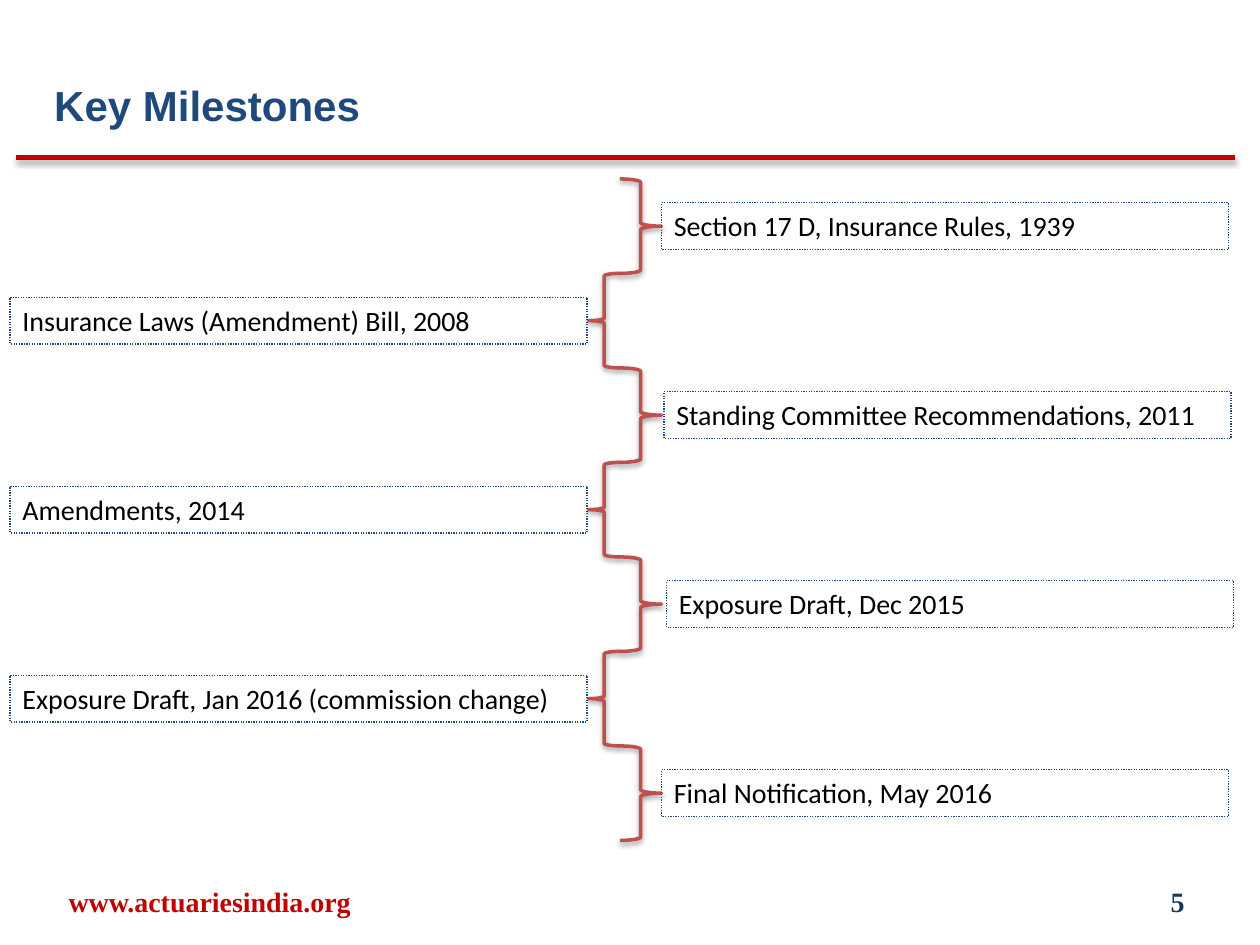
from dataclasses import dataclass

from lxml import etree
from pptx import Presentation
from pptx.dml.color import RGBColor
from pptx.enum.dml import MSO_LINE
from pptx.enum.shapes import MSO_CONNECTOR, MSO_SHAPE
from pptx.enum.text import MSO_ANCHOR, MSO_AUTO_SIZE, PP_ALIGN
from pptx.oxml.ns import qn
from pptx.util import Inches, Pt

LEFT, MID, RIGHT = PP_ALIGN.LEFT, PP_ALIGN.CENTER, PP_ALIGN.RIGHT
TOP, CENTER = MSO_ANCHOR.TOP, MSO_ANCHOR.MIDDLE
FIT, FIXED = MSO_AUTO_SIZE.SHAPE_TO_FIT_TEXT, MSO_AUTO_SIZE.NONE
OPEN, CLOSE = MSO_SHAPE.LEFT_BRACE, MSO_SHAPE.RIGHT_BRACE
DOT = MSO_LINE.ROUND_DOT
STRAIGHT = MSO_CONNECTOR.STRAIGHT


@dataclass(frozen=True)
class Theme:
    """Hold the colours, fonts and type sizes."""

    red: RGBColor = RGBColor.from_string("C00000")
    brace: RGBColor = RGBColor.from_string("C0504D")
    blue: RGBColor = RGBColor.from_string("1F497D")
    navy: RGBColor = RGBColor.from_string("17375E")
    black: RGBColor = RGBColor.from_string("000000")
    head: str = "Arial"
    body: str = "Calibri"
    foot: str = "Times New Roman"
    large: Pt = Pt(24)
    small: Pt = Pt(16)


THEME = Theme()
TITLE = {"name": THEME.head, "size": THEME.large, "bold": True}
LABEL = {"name": THEME.body, "size": THEME.small, "bold": False}
FOOT = {"name": THEME.foot, "size": THEME.small, "bold": True}

EVENTS = [
    ("Section 17 D, Insurance Rules, 1939", 5.25),
    ("Insurance Laws (Amendment) Bill, 2008", 0.08),
    ("Standing Committee Recommendations, 2011", 5.27),
    ("Amendments, 2014", 0.08),
    ("Exposure Draft, Dec 2015", 5.29),
    ("Exposure Draft, Jan 2016 (commission change)", 0.08),
    ("Final Notification, May 2016", 5.25),
]


def assign(target, values):
    """Set each named attribute of the target."""
    for name, value in values.items():
        setattr(target, name, value)


def place(shape, box):
    """Move a shape to a box given in inches."""
    names = ("left", "top", "width", "height")
    assign(shape, dict(zip(names, map(Inches, box))))


def write(shape, text, style, color, align=LEFT, anchor=TOP, fit=FIXED):
    """Fill a shape with one styled paragraph."""
    frame = shape.text_frame
    frame.text = text
    assign(frame, {"word_wrap": True, "auto_size": fit, "vertical_anchor": anchor})
    para = frame.paragraphs[0]
    para.alignment = align
    font = para.runs[0].font
    assign(font, style)
    font.color.rgb = color


def stroke(shape, color, width):
    """Give a shape a solid line."""
    shape.line.color.rgb = color
    shape.line.width = Pt(width)


def shade(shape):
    """Add a soft shadow below a shape."""
    props = shape._element.spPr
    effects = etree.SubElement(props, qn("a:effectLst"))
    cast = etree.SubElement(
        effects, qn("a:outerShdw"), blurRad="40000", dist="20000",
        dir="5400000", rotWithShape="0")
    tint = etree.SubElement(cast, qn("a:srgbClr"), val="000000")
    etree.SubElement(tint, qn("a:alpha"), val="38000")


def header(slide, box):
    """Place the title and the red rule below it."""
    left, top, width, height = box
    title = slide.shapes.title
    place(title, (left + 0.2, top, 4.75, height))
    write(title, "Key Milestones", TITLE, THEME.blue)
    ends = map(Inches, (left, top + height, left + width, top + height))
    rule = slide.shapes.add_connector(STRAIGHT, *ends)
    stroke(rule, THEME.red, 3)
    shade(rule)


def brace(slide, kind, box):
    """Draw one shadowed brace."""
    shape = slide.shapes.add_shape(kind, *map(Inches, box))
    shape.fill.background()
    stroke(shape, THEME.brace, 2)
    shade(shape)


def label(slide, text, box):
    """Draw one milestone in a dotted frame."""
    shape = slide.shapes.add_textbox(*map(Inches, box))
    write(shape, text, LABEL, THEME.black, fit=FIT)
    stroke(shape, THEME.blue, 0.75)
    shape.line.dash_style = DOT


def timeline(slide, box):
    """Alternate milestones on both sides of a chain of braces."""
    left, top, width, height = box
    step = height / len(EVENTS)
    tall = 0.37
    spine = left + 4.84
    for index, (text, edge) in enumerate(EVENTS):
        y = top + index * step
        if index % 2:
            kind, start, wide, span = OPEN, spine - 0.25, 0.25, 4.58
        else:
            kind, start, wide, span = CLOSE, spine, 0.33, 4.5
        brace(slide, kind, (start, y, wide, step))
        label(slide, text, (edge, y + (step - tall) / 2, span, tall))


def footer(slide, box):
    """Place the web address and the page number."""
    left, top, width, height = box
    page = 2.33
    parts = [
        ("www.actuariesindia.org", left, 3.17, THEME.red, MID),
        ("5", left + width - page, page, THEME.navy, RIGHT),
    ]
    for text, x, wide, color, align in parts:
        shape = slide.shapes.add_textbox(*map(Inches, (x, top, wide, height)))
        write(shape, text, FOOT, color, align, CENTER)


def main():
    """Build and save the slide."""
    deck = Presentation()
    deck.slide_width, deck.slide_height = Inches(10), Inches(7.5)
    slide = deck.slides.add_slide(deck.slide_layouts[5])
    header(slide, (0.13, 0.58, 9.67, 0.67))
    timeline(slide, (0.08, 1.42, 9.71, 5.25))
    footer(slide, (0.08, 6.95, 9.42, 0.4))
    deck.save("out.pptx")


if __name__ == "__main__":
    main()
